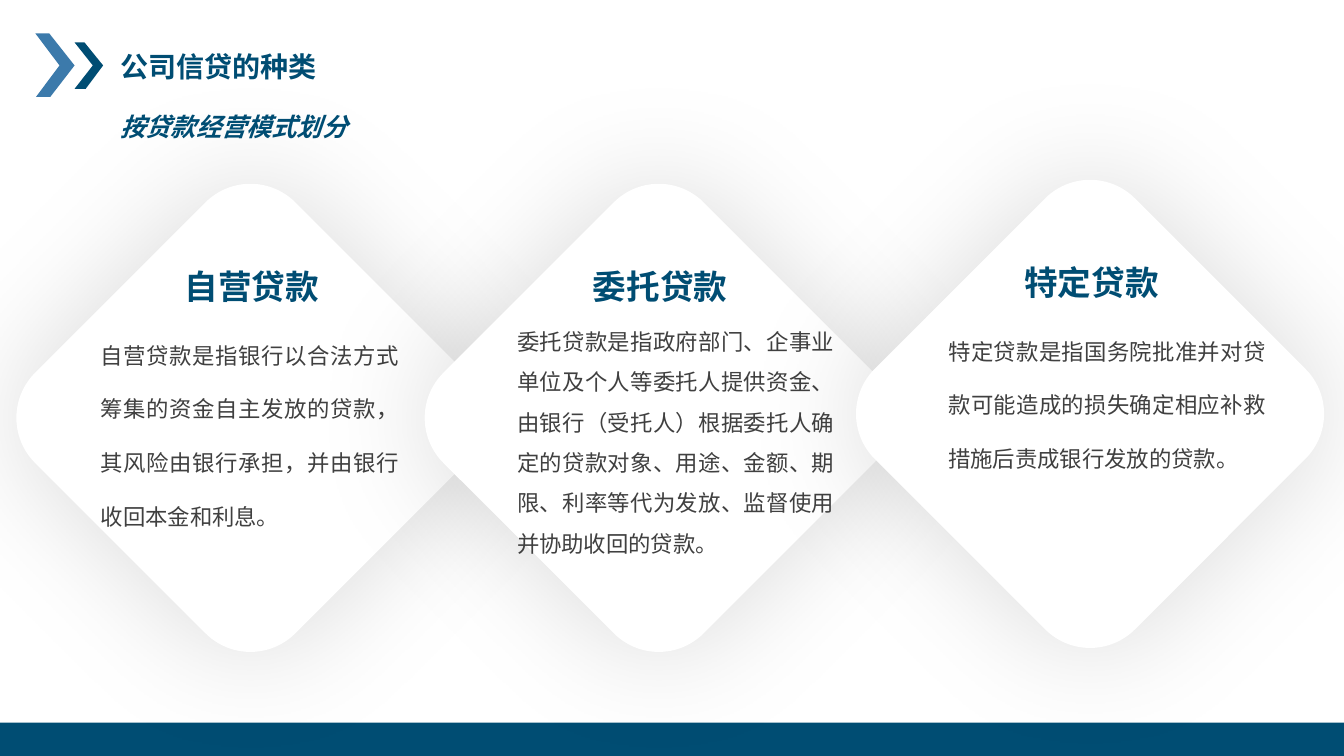
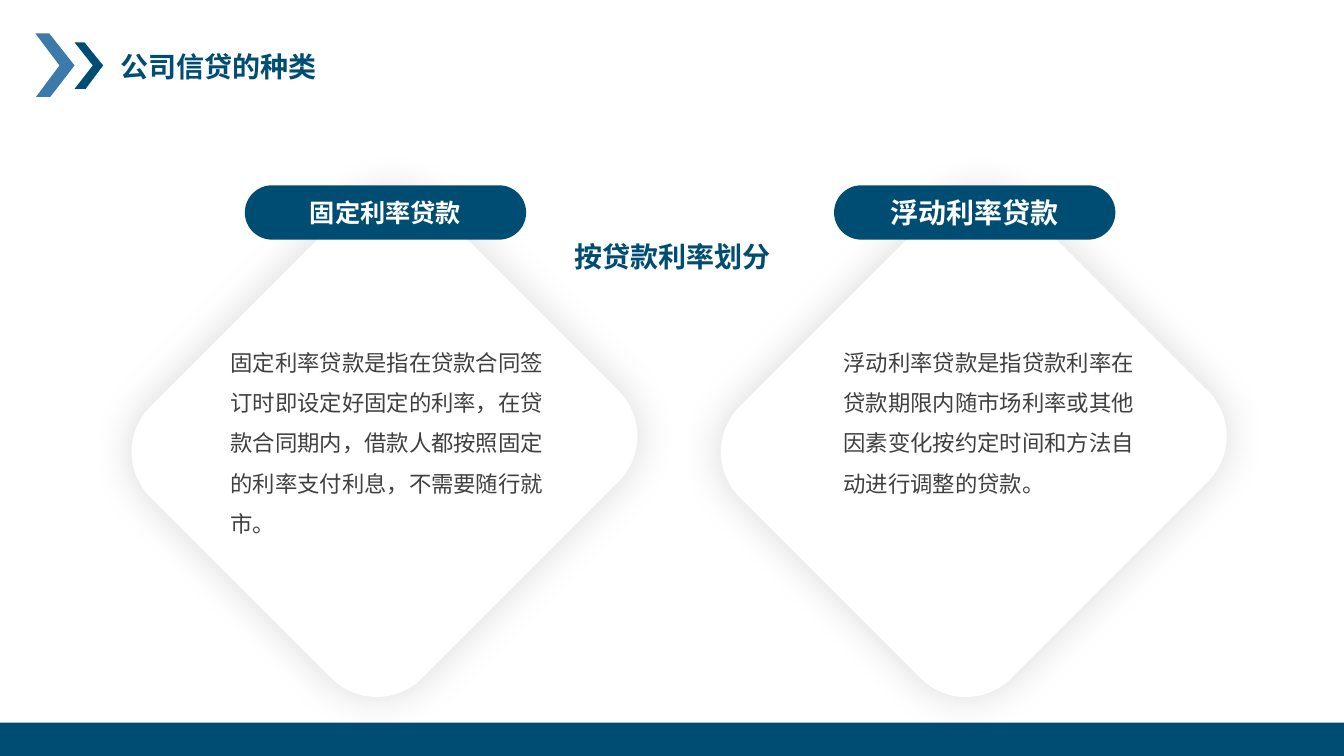
from pptx import Presentation
from pptx import util as u
from pptx.dml.color import RGBColor
from pptx.enum import shapes, text
from pptx.oxml import ns
from lxml import etree


class Theme:
    font = "Noto Sans CJK SC"
    navy = RGBColor(0x00, 0x4D, 0x73)
    blue = RGBColor(0x3C, 0x7A, 0xAB)
    gray = RGBColor(0x40, 0x40, 0x40)
    white = RGBColor(0xFF, 0xFF, 0xFF)
    body = 16
    label = 18
    title = 20
    head = 24


kind = shapes.MSO_SHAPE
side = text.PP_ALIGN


def draw(page, form, box, tone, blur=0):
    item = page.shapes.add_shape(form, *map(u.Cm, box))
    item.fill.solid()
    item.fill.fore_color.rgb = tone
    item.line.fill.background()
    item.shadow.inherit = False
    if blur:
        item.rotation = 45
        glow = item._element.spPr.find(ns.qn("a:effectLst"))
        cast = etree.SubElement(glow, ns.qn("a:outerShdw"), blurRad=str(u.Pt(blur)),
                                dist="0", dir="0", algn="ctr", rotWithShape="0")
        ink = etree.SubElement(cast, ns.qn("a:srgbClr"), val="000000")
        etree.SubElement(ink, ns.qn("a:alpha"), val="15000")
    return item


def say(item, words, size, tone, bold=True, align=side.LEFT, gap=1):
    frame = item.text_frame
    frame.word_wrap = True
    frame.text = words
    para = frame.paragraphs[0]
    para.alignment = align
    para.line_spacing = gap
    run = para.runs[0]
    run.font.size = u.Pt(size)
    run.font.bold = bold
    run.font.color.rgb = tone
    run.font.name = Theme.font
    etree.SubElement(run.font._element, ns.qn("a:ea"), typeface=Theme.font)
    return run


deck = Presentation()
deck.slide_width = u.Cm(33.87)
deck.slide_height = u.Cm(19.05)

marks = [
    (Theme.blue, [(0.89, 0.84), (1.24, 0.84), (1.88, 1.65),
                  (1.27, 2.44), (0.91, 2.44), (1.5, 1.65)]),
    (Theme.navy, [(1.88, 1.07), (2.13, 1.07), (2.6, 1.65),
                  (2.16, 2.24), (1.88, 2.24), (2.34, 1.65)]),
]
pages = []
for _ in range(2):
    page = deck.slides.add_slide(deck.slide_layouts[6])
    for tone, dots in marks:
        first, *rest = [(u.Cm(x), u.Cm(y)) for x, y in dots]
        path = page.shapes.build_freeform(*first)
        path.add_line_segments(rest)
        mark = path.convert_to_shape()
        mark.fill.solid()
        mark.fill.fore_color.rgb = tone
        mark.line.fill.background()
        mark.shadow.inherit = False
    draw(page, kind.RECTANGLE, (0, 18.21, 33.87, 0.84), Theme.navy)
    title = page.shapes.add_textbox(*map(u.Cm, (2.79, 1.12, 12.55, 1.12)))
    say(title, "公司信贷的种类", Theme.title, Theme.navy)
    pages.append(page)

modes, rates = pages

loans = [
    (1.75, 5.97, 0.54, 8.03, 2, "自营贷款",
     "自营贷款是指银行以合法方式筹集的资金自主发放的贷款，其风险由银行承担，并由银行收回本金和利息。"),
    (12.04, 5.97, 0.74, 8.51, 1.5, "委托贷款",
     "委托贷款是指政府部门、企事业单位及个人等委托人提供资金、由银行（受托人）根据委托人确定的"
     "贷款对象、用途、金额、期限、利率等代为发放、监督使用并协助收回的贷款。"),
    (22.91, 5.87, 0.74, 8.51, 2, "特定贷款",
     "特定贷款是指国务院批准并对贷款可能造成的损失确定相应补救措施后责成银行发放的贷款。"),
]
for left, top, inset, width, gap, name, words in loans:
    card = draw(modes, kind.ROUNDED_RECTANGLE, (left, top, 9.12, 9.12), Theme.white, 90)
    card.line.color.rgb = Theme.white
    card.line.width = u.Pt(4.5)
    body = modes.shapes.add_textbox(*map(u.Cm, (left + inset, top + 1.84, width, 6)))
    say(body, words, Theme.body, Theme.gray, False, side.JUSTIFY, gap)
    head = modes.shapes.add_textbox(*map(u.Cm, (left + 1.8, top + 0.6, 5.59, 1.27)))
    say(head, name, Theme.head, Theme.navy, align=side.CENTER)

note = modes.shapes.add_textbox(*map(u.Cm, (2.79, 2.67, 8, 1.02)))
say(note, "按贷款经营模式划分", Theme.label, Theme.navy).font.italic = True

plans = [
    (5.56, 8.43, Theme.label, "固定利率贷款",
     "固定利率贷款是指在贷款合同签订时即设定好固定的利率，在贷款合同期内，"
     "借款人都按照固定的利率支付利息，不需要随行就市。"),
    (21.01, 8.33, Theme.title, "浮动利率贷款",
     "浮动利率贷款是指贷款利率在贷款期限内随市场利率或其他因素变化按约定时间和方法自动进行调整的贷款。"),
]
for spot, (start, width, size, name, words) in enumerate(plans):
    left = 4.85 + spot * 14.85
    draw(rates, kind.ROUNDED_RECTANGLE, (left, 6.07, 9.68, 10.24), Theme.white, 30)
    body = rates.shapes.add_textbox(*map(u.Cm, (start, 8.33, width, 5.26)))
    say(body, words, Theme.body, Theme.gray, False, gap=1.5)
    pill = draw(rates, kind.ROUNDED_RECTANGLE, (left + 1.32, 4.67, 7.09, 1.37), Theme.navy)
    pill.adjustments[0] = 0.5
    pill.text_frame.vertical_anchor = text.MSO_ANCHOR.MIDDLE
    say(pill, name, size, Theme.white, align=side.CENTER)

note = rates.shapes.add_textbox(*map(u.Cm, (13.17, 5.92, 6.51, 1.12)))
say(note, "按贷款利率划分", Theme.title, Theme.navy, align=side.RIGHT)

deck.save("out.pptx")
